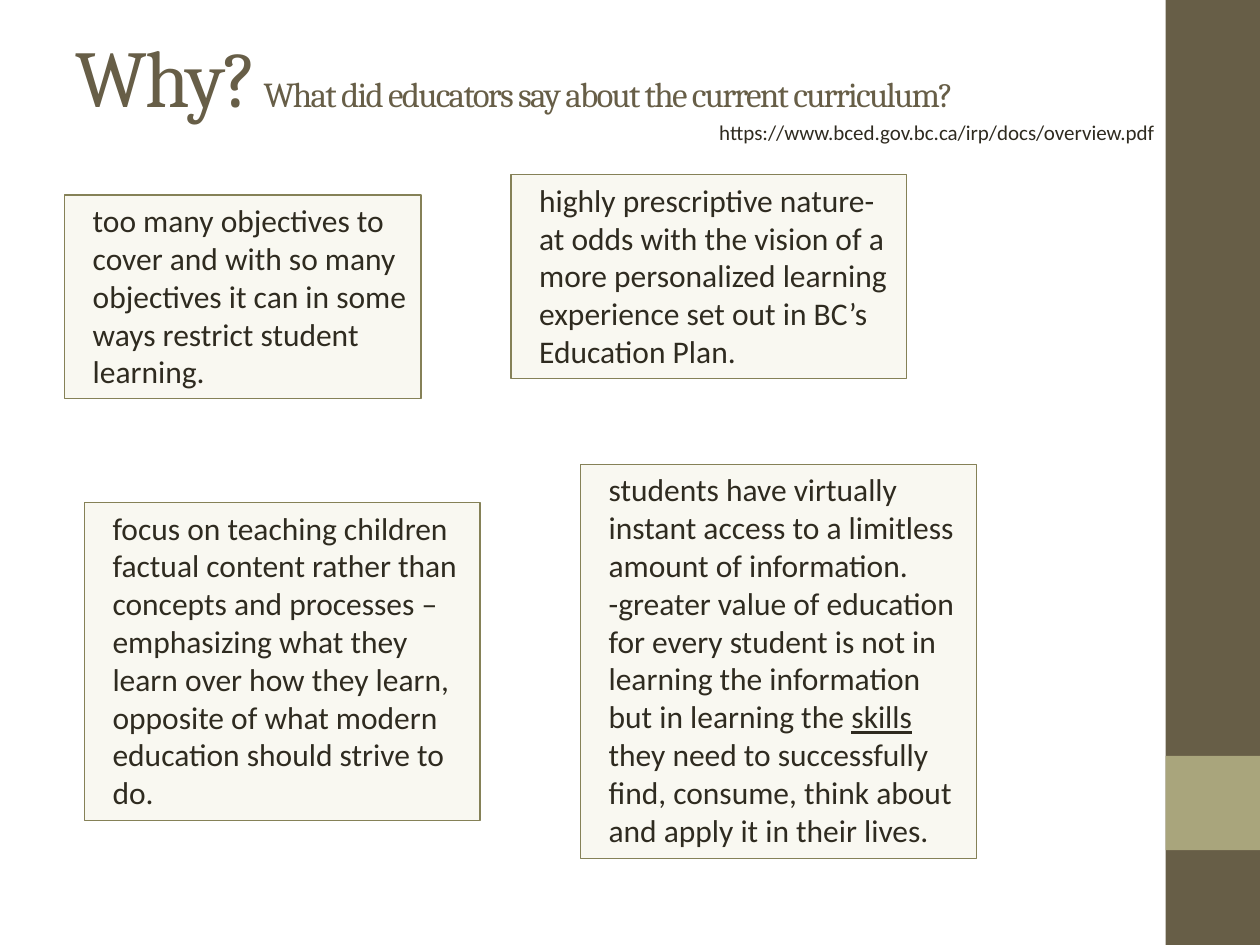
from pptx import Presentation
from pptx.dml.color import RGBColor
from pptx.enum.shapes import MSO_SHAPE
from pptx.enum.text import MSO_ANCHOR, PP_ALIGN
from pptx.util import Cm, Pt

COLORS = {
    "olive": "675E47",
    "sage": "A9A57C",
    "cream": "F9F8F1",
    "border": "858157",
    "ink": "2F2B20",
}
TITLE_ONLY_LAYOUT = 5


def color(name):
    return RGBColor.from_string(COLORS[name])


def add_text(paragraph, text, size=18, font="Calibri", ink="ink",
             underline=None, spacing=None):
    """Add one formatted run to a paragraph."""
    run = paragraph.add_run()
    run.text = text
    run.font.size = Pt(size)
    run.font.name = font
    run.font.color.rgb = color(ink)
    run.font.underline = underline
    if spacing is not None:
        run.font._element.set("spc", str(round(spacing * 100)))


class SlideBuilder:
    def __init__(self, slide):
        self.slide = slide

    def title(self, runs, left, top, width, height):
        shape = self.slide.shapes.title
        shape.left, shape.top = Cm(left), Cm(top)
        shape.width, shape.height = Cm(width), Cm(height)
        frame = shape.text_frame
        frame.vertical_anchor = MSO_ANCHOR.TOP
        frame.margin_top = 0
        paragraph = frame.paragraphs[0]
        paragraph.alignment = PP_ALIGN.LEFT
        paragraph.line_spacing = 0.9
        for text, size in runs:
            add_text(paragraph, text, size=size, font="Cambria",
                     ink="olive", spacing=-1)

    def rectangle(self, left, top, width, height, fill, line=None):
        shape = self.slide.shapes.add_shape(
            MSO_SHAPE.RECTANGLE, Cm(left), Cm(top), Cm(width), Cm(height))
        shape.shadow.inherit = False
        shape.fill.solid()
        shape.fill.fore_color.rgb = color(fill)
        if line:
            shape.line.color.rgb = color(line)
            shape.line.width = Pt(0.75)
        else:
            shape.line.fill.background()
        return shape

    def quote(self, left, top, width, height, paragraphs):
        shape = self.rectangle(left, top, width, height, "cream", "border")
        frame = shape.text_frame
        frame.word_wrap = True
        frame.vertical_anchor = MSO_ANCHOR.TOP
        for index, runs in enumerate(paragraphs):
            paragraph = frame.add_paragraph() if index else frame.paragraphs[0]
            paragraph.alignment = PP_ALIGN.LEFT
            paragraph._p.get_or_add_pPr().set("marL", str(Cm(0.32)))
            for text, underline in runs:
                add_text(paragraph, text, underline=underline)

    def caption(self, text, left, top, width, height):
        box = self.slide.shapes.add_textbox(
            Cm(left), Cm(top), Cm(width), Cm(height))
        box.text_frame.word_wrap = True
        add_text(box.text_frame.paragraphs[0], text, size=12)


def main():
    presentation = Presentation()
    presentation.slide_width, presentation.slide_height = Cm(25.4), Cm(19.05)
    layout = presentation.slide_layouts[TITLE_ONLY_LAYOUT]
    builder = SlideBuilder(presentation.slides.add_slide(layout))

    # Side band
    builder.rectangle(23.5, 0, 1.9, 19.05, "olive")
    builder.rectangle(23.5, 15.24, 1.9, 1.9, "sage")

    # Title and source address
    builder.title(
        [("Why?", 46),
         (" What did educators say about the current curriculum?", 20)],
        1.27, 0.76, 21.16, 3.18)
    builder.caption("https://www.bced.gov.bc.ca/irp/docs/overview.pdf",
                    14.25, 2.29, 10, 0.77)

    # Educators' comments: left, top, width, height, paragraphs of runs
    quotes = [
        (1.3, 3.93, 7.19, 4.11, [
            [("too many objectives to cover and with so many objectives it "
              "can in some ways restrict student learning.", None)]]),
        (10.3, 3.52, 7.98, 4.11, [
            [("highly prescriptive nature-", None)],
            [("at odds with the vision of a more personalized learning "
              "experience set out in BC’s Education Plan.", None)]]),
        (11.7, 9.36, 7.98, 7.95, [
            [("students have virtually instant access to a limitless amount "
              "of information. -greater value of education for every student "
              "is not in learning the information but in learning the ", None),
             ("skills ", True),
             ("they need to successfully find, consume, think about and "
              "apply it in their lives.", None)]]),
        (1.7, 10.13, 7.98, 6.41, [
            [("focus on teaching children factual content rather than "
              "concepts and processes – emphasizing what they learn over how "
              "they learn, opposite of what modern education should strive "
              "to do.", None)]]),
    ]
    for quote in quotes:
        builder.quote(*quote)

    presentation.save("out.pptx")


if __name__ == "__main__":
    main()
